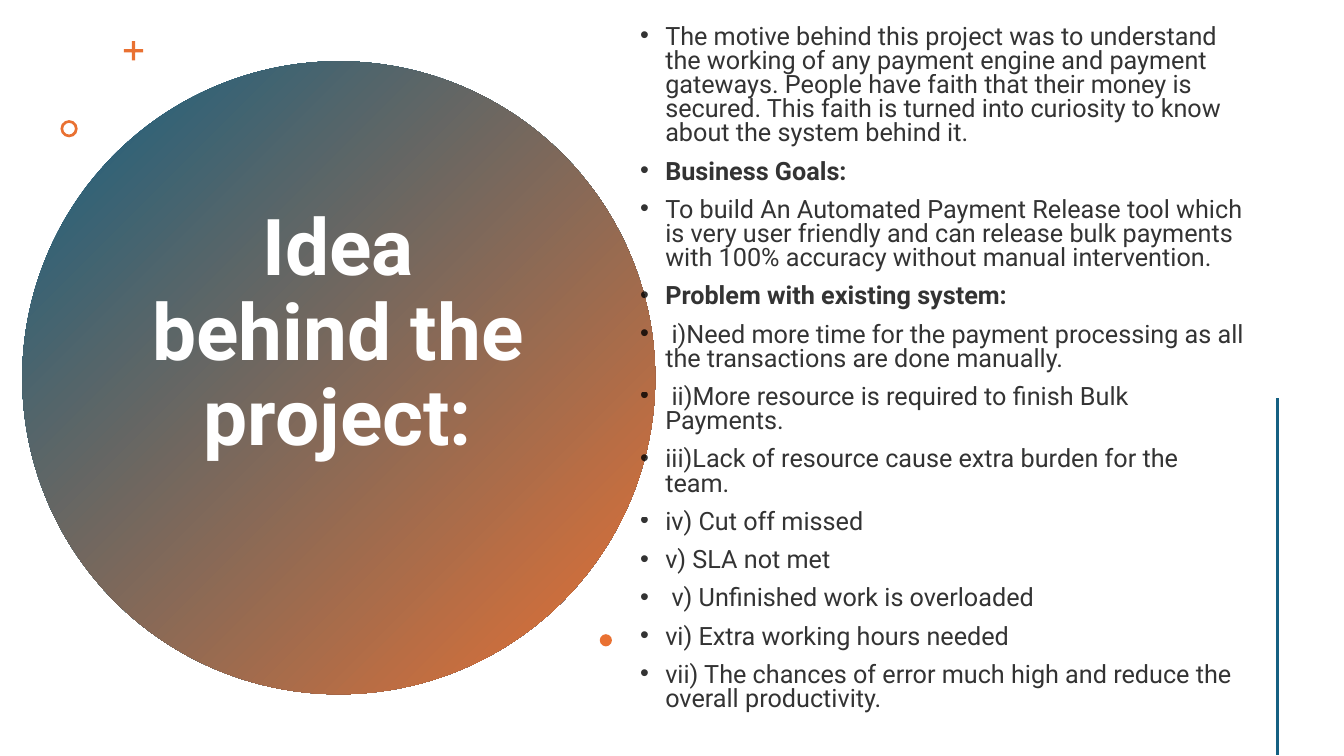
from lxml import etree
from pptx import Presentation
from pptx.dml.color import RGBColor
from pptx.enum.shapes import MSO_CONNECTOR, MSO_SHAPE
from pptx.enum.text import MSO_ANCHOR, MSO_AUTO_SIZE, PP_ALIGN
from pptx.oxml.ns import qn
from pptx.util import Inches, Pt

OVAL, RING, PLUS = MSO_SHAPE.OVAL, MSO_SHAPE.DONUT, MSO_SHAPE.CROSS
STRAIGHT = MSO_CONNECTOR.STRAIGHT
MIDDLE = MSO_ANCHOR.MIDDLE
NO_FIT = MSO_AUTO_SIZE.NONE
LEFT, CENTER = PP_ALIGN.LEFT, PP_ALIGN.CENTER

COLUMNS, ROWS = 32, 18
BLUE, ORANGE, WHITE, BLACK = "156082", "E97132", "FFFFFF", "000000"

TITLE = "Idea behind the project:"
POINTS = [
    ("The motive behind this project was to understand the working of any payment engine "
     "and payment gateways. People have faith that their money is secured. This faith is "
     "turned into curiosity to know about the system behind it.", False),
    ("Business Goals:", True),
    ("To build An Automated Payment Release tool which is very user friendly and can release "
     "bulk payments with 100% accuracy without manual intervention.", False),
    ("Problem with existing system:", True),
    (" i)Need more time for the payment processing as all the transactions are done manually.",
     False),
    (" ii)More resource is required to finish Bulk Payments.", False),
    ("iii)Lack of resource cause extra burden for the team.", False),
    ("iv) Cut off missed", False),
    ("v) SLA not met", False),
    (" v) Unfinished work is overloaded", False),
    ("vi) Extra working hours needed", False),
    ("vii) The chances of error much high and reduce the overall productivity.", False),
]


def color(value):
    return RGBColor.from_string(value)


def apply(target, values):
    for name, value in values.items():
        setattr(target, name, value)


class SlideBuilder:
    title_font = {"name": "Roboto", "size": Pt(56), "bold": True}
    body_font = {"name": "Roboto", "size": Pt(18)}

    def __init__(self, deck):
        self.page = deck.slides.add_slide(deck.slide_layouts[1])
        self.column = deck.slide_width / COLUMNS
        self.row = deck.slide_height / ROWS

    def place(self, left, top, width, height):
        return (round(left * self.column), round(top * self.row),
                round(width * self.column), round(height * self.row))

    def shape(self, kind, left, top, size, adjustment=None):
        box = self.page.shapes.add_shape(kind, *self.place(left, top, size, size))
        box.shadow.inherit = False
        box.line.fill.background()
        box.fill.solid()
        box.fill.fore_color.rgb = color(ORANGE)
        if adjustment is not None:
            box.adjustments[0] = adjustment
        return box

    def gradient_circle(self, left, top, size):
        fill = self.shape(OVAL, left, top, size).fill
        fill.gradient()
        fill.gradient_angle = 315
        for stop, position, value in zip(fill.gradient_stops, (0, 1), (BLUE, ORANGE)):
            stop.position = position
            stop.color.rgb = color(value)

    def placeholder(self, index, area, bottom_margin):
        box = self.page.placeholders[index]
        self.page.shapes.element.append(box.element)
        apply(box, dict(zip(("left", "top", "width", "height"), self.place(*area))))
        apply(box.text_frame, {"word_wrap": True, "auto_size": NO_FIT,
                               "vertical_anchor": MIDDLE,
                               "margin_bottom": Inches(bottom_margin)})
        return box.text_frame

    def span(self, para, text, font, value):
        span = para.add_run()
        span.text = text
        apply(span.font, font)
        span.font.color.rgb = color(value)
        return span

    def title(self, text, area):
        para = self.placeholder(0, area, 0.89).paragraphs[0]
        apply(para, {"alignment": CENTER, "line_spacing": 0.9})
        self.span(para, text, self.title_font, WHITE)

    def bullets(self, points, area):
        frame = self.placeholder(1, area, 0.35)
        for number, (text, bold) in enumerate(points):
            para = frame.add_paragraph() if number else frame.paragraphs[0]
            apply(para, {"alignment": LEFT, "line_spacing": 0.8,
                         "space_before": Pt(10 if number else 0)})
            properties = para._p.get_or_add_pPr()
            properties.set("marL", str(Inches(0.25)))
            properties.set("indent", str(Inches(-0.25)))
            etree.SubElement(properties, qn("a:buFont"), typeface="Arial")
            etree.SubElement(properties, qn("a:buChar"), char="•")
            span = self.span(para, text, {**self.body_font, "bold": bold}, BLACK)
            shade = span.font._element.find(".//" + qn("a:srgbClr"))
            etree.SubElement(shade, qn("a:alpha"), val="80000")

    def vertical_line(self, left, top, bottom):
        start = self.place(left, top, 0, 0)[:2]
        end = self.place(left, bottom, 0, 0)[:2]
        line = self.page.shapes.add_connector(STRAIGHT, *start, *end)
        line.line.color.rgb = color(BLUE)
        line.line.width = Pt(2)
        etree.SubElement(line.element.spPr, qn("a:effectLst"))


def main():
    deck = Presentation()
    apply(deck, {"slide_width": Inches(13.33), "slide_height": Inches(7.5)})
    slide = SlideBuilder(deck)
    slide.gradient_circle(0.53, 1.46, 15.07)
    slide.title(TITLE, (3.26, 3.38, 9.58, 11.21))
    slide.shape(PLUS, 2.95, 0.98, 0.46, 0.42)
    slide.shape(RING, 1.44, 2.86, 0.41, 0.16)
    slide.bullets(POINTS, (15, 1.2, 14.95, 15.89))
    slide.shape(OVAL, 14.28, 15.1, 0.29)
    slide.vertical_line(30.41, 9.48, 17.98)
    deck.save("out.pptx")


if __name__ == "__main__":
    main()
